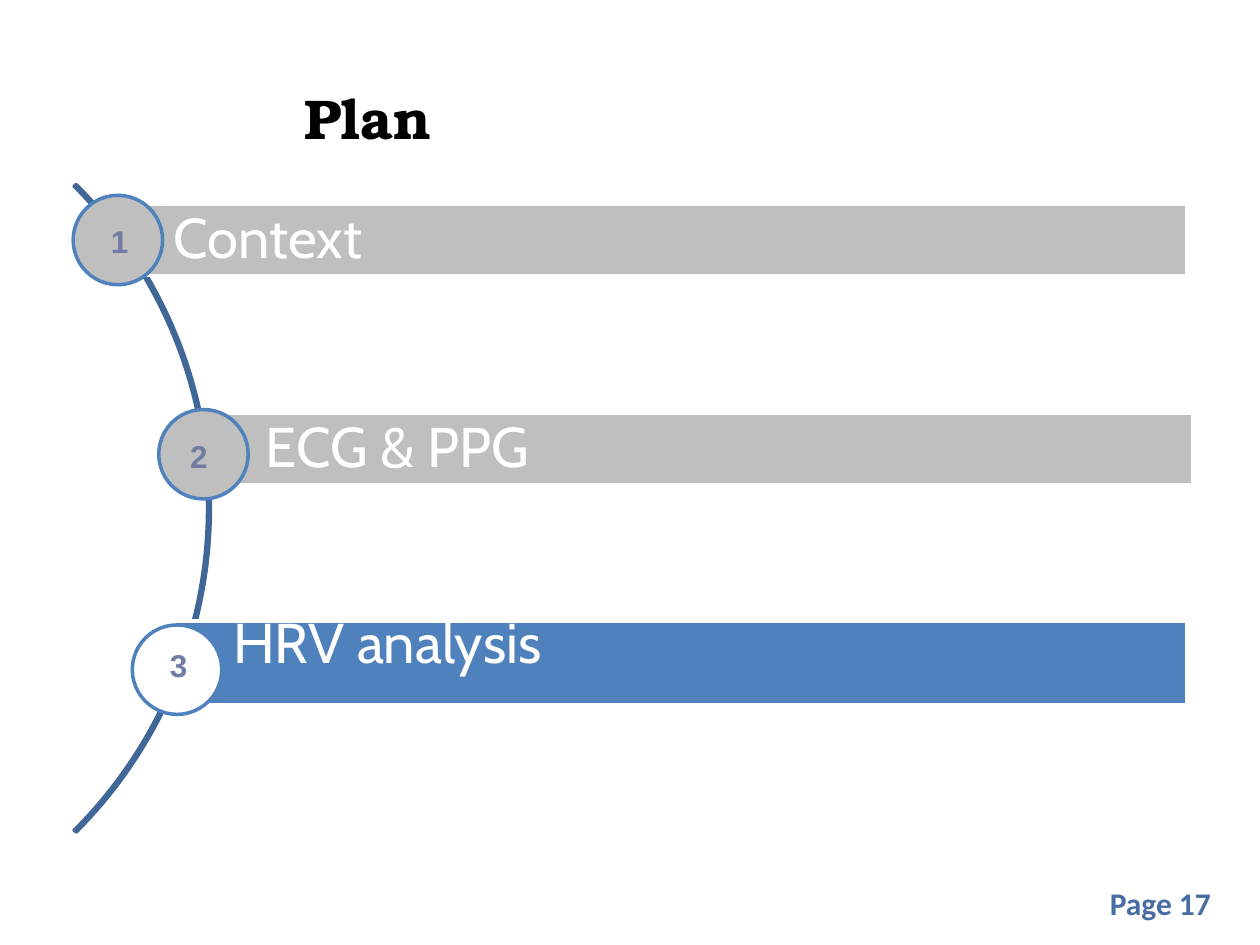
from pptx import Presentation
from pptx.dml.color import RGBColor
from pptx.enum import shapes, text
from pptx.util import Pt

COLORS = {"gray": "BFBFBF", "blue": "4F81BD", "arc": "3F6797", "white": "FFFFFF",
          "number": "727CA3", "page": "486DA2", "black": "000000"}
BAR_INSETS = (32.4, 6.5, 6.5, 6.5)
RAISED_INSETS = (32.4, 6.5, 6.5, 26)
TEXT_INSETS = (7.2, 3.6, 7.2, 3.6)
DISC = 51.1
ITEMS = [
    {"label": "Context", "bar": (67, 116.6, 611.3, 41), "fill": "gray", "insets": BAR_INSETS,
     "disc": (41.8, 111.6), "disc_fill": "gray", "number": (56.2, 123.1), "number_fill": "gray"},
    {"label": "ECG & PPG", "bar": (119.5, 236.2, 562.3, 41), "fill": "gray", "insets": BAR_INSETS,
     "disc": (90.7, 234), "disc_fill": "gray", "number": (101.5, 246.2), "number_fill": "gray"},
    {"label": "HRV analysis", "bar": (100.8, 355, 577.4, 47.5), "fill": "blue", "insets": RAISED_INSETS,
     "disc": (75.6, 357.1), "disc_fill": "white", "number": (90, 365.8), "number_fill": None},
]


def rgb(name):
    return RGBColor.from_string(COLORS[name])


def place(sp, box):
    sp.left, sp.top, sp.width, sp.height = (Pt(v) for v in box)


def add_shape(s, kind, box, fill=None, line=None):
    sp = s.shapes.add_shape(kind, *(Pt(v) for v in box))
    sp.shadow.inherit = False
    if fill:
        sp.fill.solid()
        sp.fill.fore_color.rgb = rgb(fill)
    else:
        sp.fill.background()
    if line:
        sp.line.color.rgb = rgb(line)
        sp.line.width = Pt(2)
    else:
        sp.line.fill.background()
    return sp


def write(sp, words, font, size, color, bold=False, anchor="TOP", insets=TEXT_INSETS, wrap=True):
    tf = sp.text_frame
    tf.text = words
    tf.word_wrap = wrap
    tf.auto_size = text.MSO_AUTO_SIZE.NONE
    tf.vertical_anchor = text.MSO_ANCHOR[anchor]
    tf.margin_left, tf.margin_top, tf.margin_right, tf.margin_bottom = (Pt(v) for v in insets)
    p = tf.paragraphs[0]
    p.alignment = text.PP_ALIGN.LEFT
    f = p.runs[0].font
    f.name, f.size, f.bold = font, Pt(size), bold
    f.color.rgb = rgb(color)
    return p


def main():
    """Build the plan slide with its numbered steps along an arc."""
    prs = Presentation()
    prs.slide_width, prs.slide_height = Pt(720), Pt(540)
    s = prs.slides.add_slide(prs.slide_layouts[5])
    kinds = shapes.MSO_SHAPE

    title = s.shapes.title
    place(title, (167, 12.2, 517, 77.8))
    write(title, "Plan", "TeX Gyre Bonum", 32, "black", bold=True, anchor="BOTTOM")

    page = s.shapes.add_textbox(Pt(627.1), Pt(501.8), Pt(84.2), Pt(28.8))
    write(page, "Page 17", "Calibri", 18, "page", bold=True, wrap=False)

    arc = add_shape(s, kinds.BLOCK_ARC, (-403.2, 28.8, 523.4, 523.4), line="arc")
    for i, value in enumerate((189, 27, 0.003)):
        arc.adjustments[i] = value

    for item in ITEMS:
        bar = add_shape(s, kinds.RECTANGLE, item["bar"], item["fill"], "white")
        p = write(bar, item["label"], "Cabin", 32, "white", anchor="MIDDLE", insets=item["insets"])
        p.line_spacing = 0.9
        add_shape(s, kinds.OVAL, (*item["disc"], DISC, DISC), item["disc_fill"], "blue")

    for n, item in enumerate(ITEMS, 1):
        sp = add_shape(s, kinds.RECTANGLE, (*item["number"], 22.3, 28.8), item["number_fill"])
        write(sp, str(n), "Arial", 18, "number", bold=True)

    prs.save("out.pptx")


if __name__ == "__main__":
    main()
